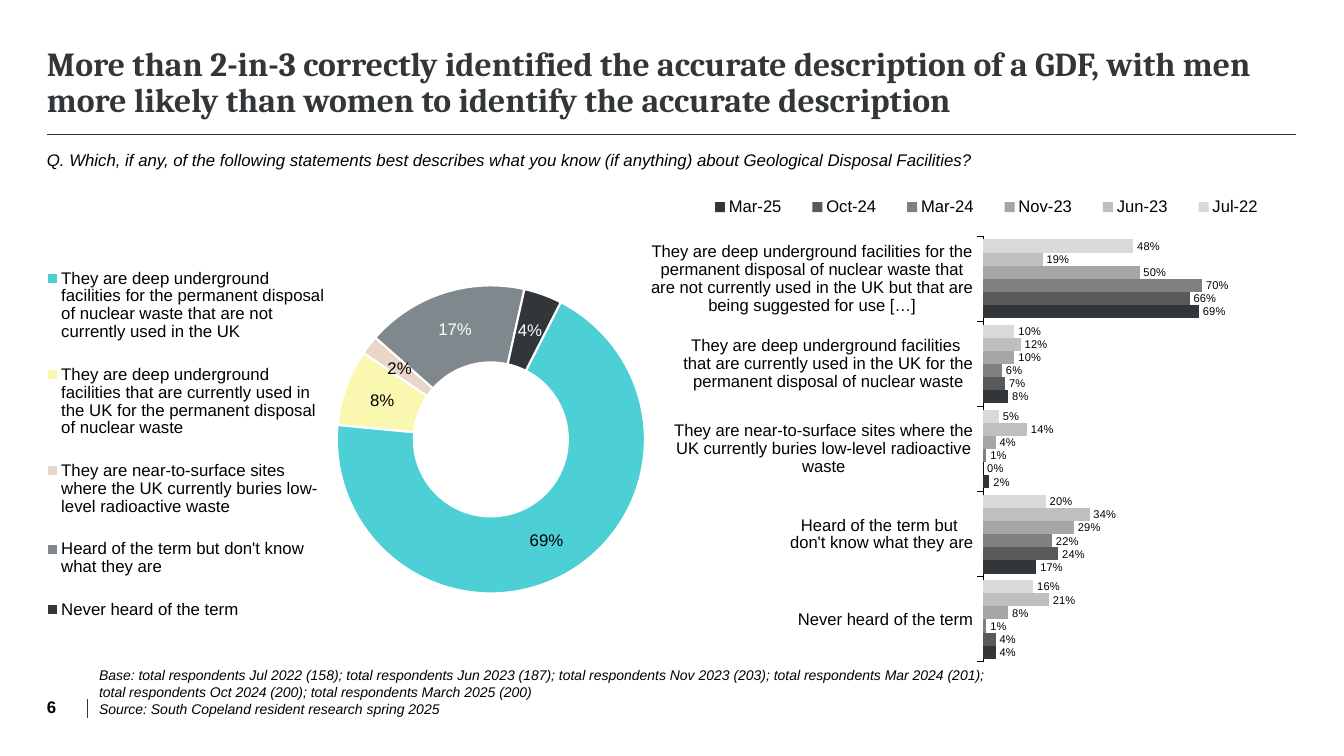
from lxml import etree
from pptx import Presentation
from pptx.chart.data import CategoryChartData
from pptx.dml.color import RGBColor
from pptx.enum.chart import XL_CHART_TYPE, XL_LABEL_POSITION, XL_LEGEND_POSITION, XL_TICK_MARK
from pptx.enum.shapes import MSO_CONNECTOR
from pptx.enum.text import MSO_ANCHOR
from pptx.oxml.ns import qn
from pptx.util import Pt

RING, BARS = XL_CHART_TYPE.DOUGHNUT, XL_CHART_TYPE.BAR_CLUSTERED
LEFT, TOP = XL_LEGEND_POSITION.LEFT, XL_LEGEND_POSITION.TOP
OUT_END = XL_LABEL_POSITION.OUTSIDE_END
TICK_OUT = XL_TICK_MARK.OUTSIDE
HIGH, LOW = MSO_ANCHOR.TOP, MSO_ANCHOR.BOTTOM
STRAIGHT = MSO_CONNECTOR.STRAIGHT
PX = 914400 / 100.8

HUES = {"ink": "323638", "black": "000000", "white": "FFFFFF",
        "teal": "4DCFD6", "yellow": "FAF8B0", "pink": "E8D6C9", "slate": "7F888D"}
TITLE = ("More than 2-in-3 correctly identified the accurate description of a GDF, "
         "with men more likely than women to identify the accurate description")
ASK = ("Q. Which, if any, of the following statements best describes what you know "
       "(if anything) about Geological Disposal Facilities?")
NOTES = [
    "Base: total respondents Jul 2022 (158); total respondents Jun 2023 (187); "
    "total respondents Nov 2023 (203); total respondents Mar 2024 (201); "
    "total respondents Oct 2024 (200); total respondents March 2025 (200)",
    "Source: South Copeland resident research spring 2025",
]
DEEP = ("They are deep underground facilities for the permanent disposal of nuclear "
        "waste that are not currently used in the UK")
NEAR = ("They are near-to-surface sites where the UK currently buries "
        "low-level radioactive waste")
NEVER = "Never heard of the term"
KINDS = [
    DEEP,
    "They are deep underground facilities that are currently used in the UK "
    "for the permanent disposal of nuclear waste",
    NEAR, "Heard of the term but don't know what they are", NEVER,
]
ROWS = [
    DEEP + " but that are being suggested for use […]",
    "They are deep underground facilities \nthat are currently used in the UK "
    "for the permanent disposal of nuclear waste",
    NEAR, "Heard of the term but \ndon't know what they are", NEVER,
]
NOW = (0.69, 0.08, 0.02, 0.17, 0.04)
SLICES = [("teal", "black"), ("yellow", "black"), ("pink", "black"),
          ("slate", "white"), ("ink", "white")]
WAVES = [
    ("Jul-22", "D9D9D9", (0.48, 0.1, 0.05, 0.2, 0.16)),
    ("Jun-23", "BFBFBF", (0.19, 0.12, 0.14, 0.34, 0.21)),
    ("Nov-23", "A6A6A6", (0.5, 0.1, 0.04, 0.29, 0.08)),
    ("Mar-24", "808080", (0.7, 0.06, 0.01, 0.22, 0.01)),
    ("Oct-24", "595959", (0.66, 0.07, 0, 0.24, 0.04)),
    ("Mar-25", HUES["ink"], NOW),
]
RULES = [((47, 135, 1296, 135), 0.75), ((87, 699, 87, 718), 0.5)]


def emu(*nums):
    return [round(n * PX) for n in nums]


def rgb(hue):
    return RGBColor.from_string(HUES.get(hue, hue))


def style(font, size, hue="black", face="Arial", bold=False, ital=False):
    font.size, font.name = Pt(size), face
    font.bold, font.italic = bold, ital
    font.color.rgb = rgb(hue)


def write(slide, box, lines, anchor=LOW, lead=None, after=None, **look):
    frame = slide.shapes.add_textbox(*emu(*box)).text_frame
    frame.word_wrap, frame.vertical_anchor = True, anchor
    frame.margin_left = frame.margin_right = frame.margin_top = frame.margin_bottom = 0
    for i, line in enumerate(lines):
        para = frame.add_paragraph() if i else frame.paragraphs[0]
        if lead:
            para.line_spacing = lead
        if after:
            para.space_after = Pt(after)
        run = para.add_run()
        run.text = line
        style(run.font, **look)


def rule(slide, ends, width):
    line = slide.shapes.add_connector(STRAIGHT, *emu(*ends))
    line.line.color.rgb, line.line.width = rgb("ink"), Pt(width)
    etree.SubElement(line._element.spPr, qn("a:effectLst"))


def lay(node, spot, x, y, w, h, inner=False):
    for old in node.findall(qn("c:layout")):
        node.remove(old)
    wrap = etree.Element(qn("c:layout"))
    node.insert(spot, wrap)
    man = etree.SubElement(wrap, qn("c:manualLayout"))
    parts = [("layoutTarget", "inner")] if inner else []
    parts += [("xMode", "edge"), ("yMode", "edge"), ("x", x), ("y", y), ("w", w), ("h", h)]
    for tag, val in parts:
        etree.SubElement(man, qn("c:" + tag)).set("val", str(val))


def plot(slide, kind, box, cats, sets, area, side, key):
    data = CategoryChartData(number_format="0%")
    data.categories = cats
    for name, vals in sets:
        data.add_series(name, vals)
    chart = slide.shapes.add_chart(kind, *emu(*box), data).chart
    style(chart.font, 10)
    chart.has_title = False
    chart.has_legend = True
    chart.legend.position = side
    chart.legend.include_in_layout = False
    style(chart.legend.font, 12)
    lay(chart.legend._element, 1, *key)
    lay(chart._chartSpace.chart.plotArea, 0, *area, inner=True)
    return chart


def mark(labels, size, hue="black"):
    labels.show_value = True
    labels.number_format, labels.number_format_is_linked = "0%", False
    style(labels.font, size, hue)


def ring(slide):
    chart = plot(slide, RING, (47, 213, 604, 453), KINDS, [("Series 1", NOW)],
                 (0.48, 0.16, 0.51, 0.68), LEFT, (0, 0.07, 0.46, 0.88))
    node = chart.plots[0]._element
    for tag, val in (("firstSliceAng", "27"), ("holeSize", "19")):
        node.find(qn("c:" + tag)).set("val", val)
    chart.plots[0].vary_by_categories = True
    series = chart.plots[0].series[0]
    mark(series.data_labels, 12)
    for i, (fill, hue) in enumerate(SLICES):
        point = series.points[i]
        point.format.fill.solid()
        point.format.fill.fore_color.rgb = rgb(fill)
        point.format.line.color.rgb = rgb("white")
        point.format.line.width = Pt(1.5)
        style(point.data_label.font, 12, hue)


def bars(slide):
    chart = plot(slide, BARS, (651, 183, 645, 484), ROWS, [(n, v) for n, _, v in WAVES],
                 (0.51, 0.11, 0.49, 0.88), TOP, (0.05, 0.02, 0.93, 0.06))
    group = chart.plots[0]
    group.gap_width, group.overlap, group.vary_by_categories = 50, 0, False
    for series, (_, hue, _) in zip(group.series, WAVES):
        series.format.fill.solid()
        series.format.fill.fore_color.rgb = rgb(hue)
        series.invert_if_negative = False
        mark(series.data_labels, 8)
        series.data_labels.position = OUT_END
    cat, val = chart.category_axis, chart.value_axis
    cat.reverse_order, cat.major_tick_mark = True, TICK_OUT
    cat.has_major_gridlines = val.has_major_gridlines = False
    cat.format.line.color.rgb, cat.format.line.width = rgb("black"), Pt(0.75)
    style(cat.tick_labels.font, 12)
    val.minimum_scale, val.maximum_scale, val.major_unit = 0, 1, 0.25
    val.visible = False


def main():
    deck = Presentation()
    deck.slide_width, deck.slide_height = emu(1344, 756)
    slide = deck.slides.add_slide(deck.slide_layouts[6])
    for ends, width in RULES:
        rule(slide, ends, width)
    write(slide, (47, 680, 31, 37), ["6"], size=12, bold=True)
    write(slide, (47, 38, 1233, 82), [TITLE], lead=0.9,
          size=24, hue="ink", face="Cambria", bold=True)
    write(slide, (47, 147, 1212, 36), [ASK], anchor=HIGH, lead=1.13, after=10,
          size=12, ital=True)
    ring(slide)
    bars(slide)
    write(slide, (99, 680, 895, 37), NOTES, size=10, ital=True)
    deck.save("out.pptx")


if __name__ == "__main__":
    main()
